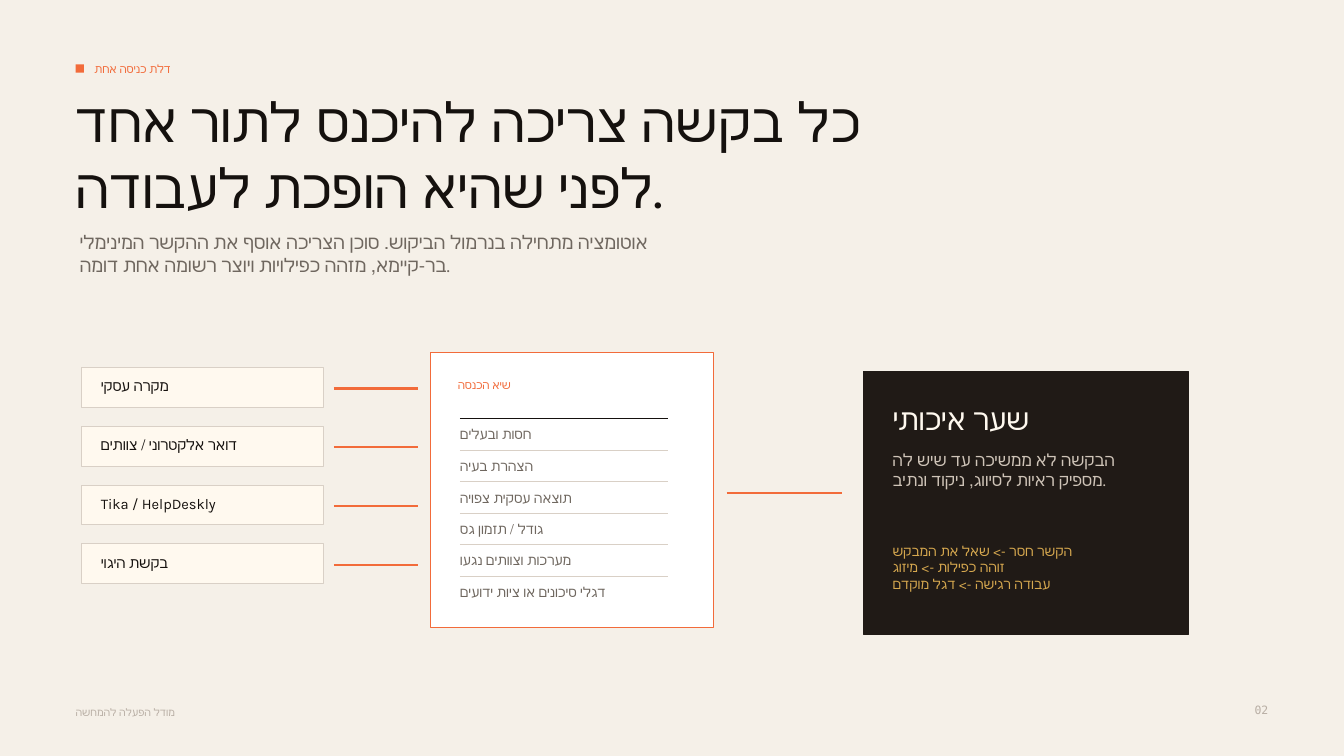
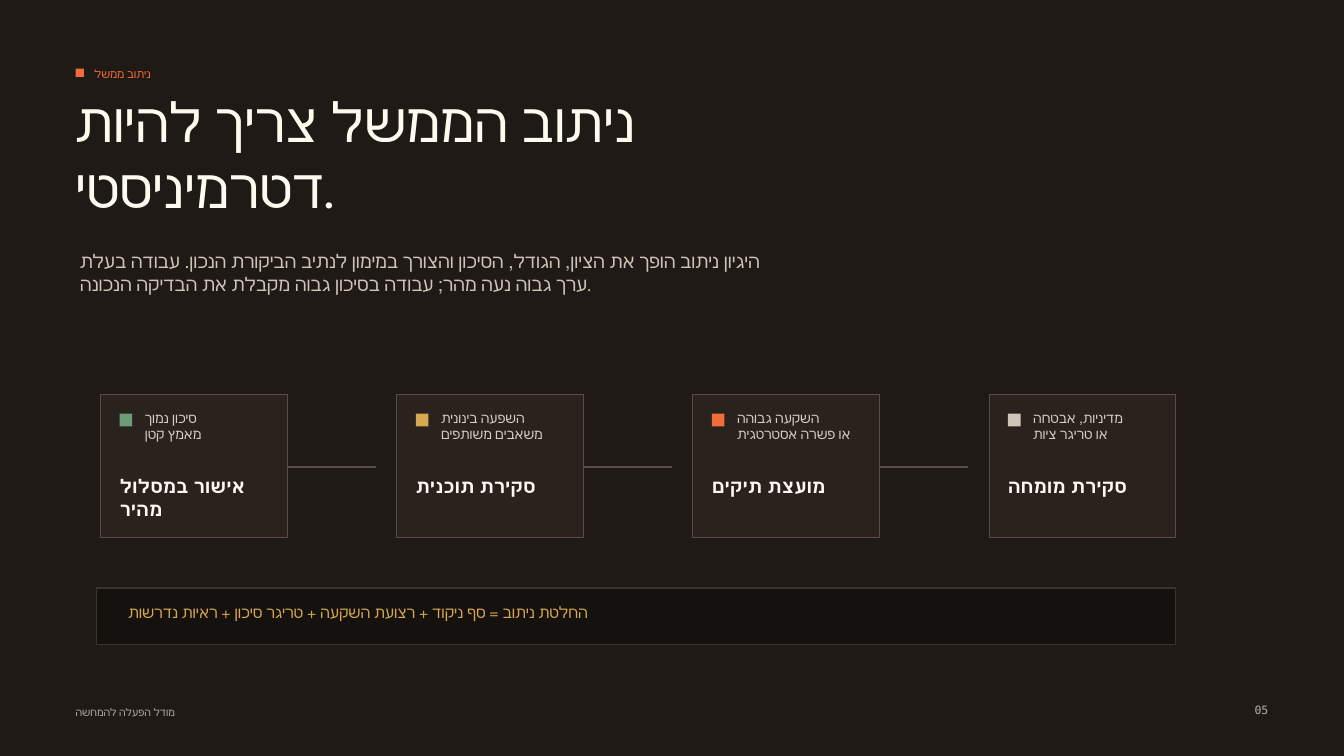
from lxml.etree import SubElement
from pptx import Presentation
from pptx.dml.color import RGBColor
from pptx.enum.shapes import MSO_CONNECTOR, MSO_SHAPE
from pptx.enum.text import MSO_ANCHOR, PP_ALIGN
from pptx.oxml.ns import qn
from pptx.util import Pt

SANS = "Karla"
MONO = "DejaVu Sans Mono"
INK = "15110E"
DARK = "201A16"
PAPER = "F5F0E8"
CREAM = "FFF9EF"
WHITE = "FFFFFF"
ORANGE = "F26B3A"
GOLD = "D6A84F"
GREEN = "6E9B78"
SAND = "CFC4B8"
PALE = "D9CFC4"
RULE = "D9D0C6"
GREY = "6F675F"
MUTED = "B8AEA4"
BROWN = "5B4D44"
PANEL = "2A221D"
EDGE = "3C332D"
FOOTER = "מודל הפעלה להמחשה"


def color(value):
    """Turn a hex string into a colour."""
    return RGBColor.from_string(value)


def add_box(page, left, top, width, height, fill, line=None):
    """Add a flat rectangle with an optional thin outline."""
    box = page.shapes.add_shape(MSO_SHAPE.RECTANGLE, Pt(left), Pt(top), Pt(width), Pt(height))
    box.shadow.inherit = False
    box.fill.solid()
    box.fill.fore_color.rgb = color(fill)
    if line:
        box.line.color.rgb = color(line)
        box.line.width = Pt(0.75)
    else:
        box.line.fill.background()


def add_line(page, left, top, width, stroke, weight=1.5):
    """Add a horizontal line without a shadow."""
    line = page.shapes.add_connector(
        MSO_CONNECTOR.STRAIGHT, Pt(left), Pt(top), Pt(left + width), Pt(top))
    line.line.color.rgb = color(stroke)
    line.line.width = Pt(weight)
    SubElement(line._element.spPr, qn("a:effectLst"))


def add_text(page, left, top, width, height, text, size, ink, font=SANS,
             bold=None, align=None, anchor=MSO_ANCHOR.TOP):
    """Add a wrapped text box without margins, one paragraph per line of text."""
    box = page.shapes.add_textbox(Pt(left), Pt(top), Pt(width), Pt(height))
    frame = box.text_frame
    frame.text = text
    frame.word_wrap = True
    frame.vertical_anchor = anchor
    frame.margin_left = frame.margin_right = frame.margin_top = frame.margin_bottom = 0
    for para in frame.paragraphs:
        para.alignment = align
        for span in para.runs:
            span.font.name = font
            span.font.size = Pt(size)
            span.font.color.rgb = color(ink)
            span.font.bold = bold


def add_page(deck, background, title_ink, number, eyebrow, eyebrow_top, title, title_width):
    """Add a page with its background, eyebrow, title and footer."""
    page = deck.slides.add_slide(deck.slide_layouts[6])
    page.background.fill.solid()
    page.background.fill.fore_color.rgb = color(background)
    add_box(page, 54, eyebrow_top + 5.5, 6, 6, ORANGE)
    add_text(page, 67.5, eyebrow_top, 315, 18, eyebrow, 8.2, ORANGE, MONO,
             anchor=MSO_ANCHOR.MIDDLE)
    add_text(page, 54, 63, title_width, 99, title, 39, title_ink)
    add_text(page, 54, 504, 240, 13.5, FOOTER, 7.5, MUTED, MONO)
    add_text(page, 870, 502.5, 36, 15, number, 8.2, MUTED, MONO, align=PP_ALIGN.RIGHT)
    return page


def add_source(page, left, top, label):
    """Add a request source and the line leading out of it."""
    add_box(page, left, top, 172.5, 28.5, CREAM, RULE)
    add_text(page, left + 13.5, top + 6.75, 142.5, 13.5, label, 10.5, INK)
    add_line(page, left + 180, top + 15, 60, ORANGE)


def add_record(page, left, top, heading, fields):
    """Add the intake record with a rule above each field."""
    add_box(page, left, top, 202.5, 196.5, WHITE, ORANGE)
    add_text(page, left + 19.5, top + 18, 142.5, 13.5, heading, 8.2, ORANGE, MONO)
    for index, field in enumerate(fields):
        rule_top = top + 47 + index * 22.5
        add_line(page, left + 21, rule_top, 148.5, RULE if index else INK, 0.75)
        add_text(page, left + 21, rule_top + 5.5, 154, 13.5, field, 9.8, GREY)


def add_gate(page, left, top, heading, body, rules):
    """Add the dark quality gate panel."""
    add_box(page, left, top, 232.5, 187.5, DARK, DARK)
    add_text(page, left + 21, top + 21, 165, 28.5, heading, 21, CREAM)
    add_text(page, left + 21, top + 55.5, 172.5, 63, body, 12, SAND)
    add_text(page, left + 21, top + 122, 172.5, 52.5, rules, 9.8, GOLD, MONO)


def add_route(page, left, top, marker, condition, decision):
    """Add one governance route card."""
    add_box(page, left, top, 133.5, 102, PANEL, BROWN)
    add_box(page, left + 13.5, top + 13.5, 9, 9, marker)
    add_text(page, left + 31.5, top + 10.5, 84, 36, condition, 9.8, PALE)
    add_text(page, left + 13.5, top + 57, 105, 31.5, decision, 13.5, CREAM, bold=True)


def add_formula(page, left, top, formula):
    """Add the bar that states the routing rule."""
    add_box(page, left, top, 771, 40.5, INK, EDGE)
    add_text(page, left + 22.5, top + 10.5, 540, 19.5, formula, 11.2, GOLD, MONO)


def build_intake(deck):
    """Build the single intake page."""
    page = add_page(deck, PAPER, INK, "02", "דלת כניסה אחת", 40.5,
                    "כל בקשה צריכה להיכנס לתור אחד לפני שהיא הופכת לעבודה.", 615)
    add_text(page, 57, 165, 457.5, 54,
             "אוטומציה מתחילה בנרמול הביקוש. סוכן הצריכה אוסף את ההקשר המינימלי "
             "בר-קיימא, מזהה כפילויות ויוצר רשומה אחת דומה.", 13.5, GREY)
    sources = ["מקרה עסקי", "דואר אלקטרוני / צוותים", "Tika / HelpDeskly", "בקשת היגוי"]
    for index, label in enumerate(sources):
        add_source(page, 58.5, 262.5 + index * 42, label)
    add_record(page, 307.5, 252, "שיא הכנסה", [
        "חסות ובעלים", "הצהרת בעיה", "תוצאה עסקית צפויה",
        "גודל / תזמון גס", "מערכות וצוותים נגעו", "דגלי סיכונים או ציות ידועים"])
    add_line(page, 519, 352, 82.5, ORANGE)
    add_gate(page, 616.5, 265.5, "שער איכותי",
             "הבקשה לא ממשיכה עד שיש לה מספיק ראיות לסיווג, ניקוד ונתיב.",
             "הקשר חסר -> שאל את המבקש\nזוהה כפילות -> מיזוג\nעבודה רגישה -> דגל מוקדם")


def build_routing(deck):
    """Build the governance routing page."""
    page = add_page(deck, DARK, CREAM, "05", "ניתוב ממשל", 43.5,
                    "ניתוב הממשל צריך להיות דטרמיניסטי.", 592.5)
    add_text(page, 57, 178.5, 495, 57,
             "היגיון ניתוב הופך את הציון, הגודל, הסיכון והצורך במימון לנתיב הביקורת הנכון. "
             "עבודה בעלת ערך גבוה נעה מהר; עבודה בסיכון גבוה מקבלת את הבדיקה הנכונה.",
             13.5, SAND)
    routes = [
        (GREEN, "סיכון נמוך\nמאמץ קטן", "אישור במסלול מהיר"),
        (GOLD, "השפעה בינונית\nמשאבים משותפים", "סקירת תוכנית"),
        (ORANGE, "השקעה גבוהה\nאו פשרה אסטרטגית", "מועצת תיקים"),
        (SAND, "מדיניות, אבטחה\nאו טריגר ציות", "סקירת מומחה"),
    ]
    for index, route in enumerate(routes):
        left = 72 + index * 211.5
        if index < len(routes) - 1:
            add_line(page, left + 133.5, 333.5, 63, BROWN)
        add_route(page, left, 282, *route)
    add_formula(page, 69, 420,
                "החלטת ניתוב = סף ניקוד + רצועת השקעה + טריגר סיכון + ראיות נדרשות")


def main():
    """Build and save the deck."""
    deck = Presentation()
    deck.slide_width = Pt(960)
    deck.slide_height = Pt(540)
    build_intake(deck)
    build_routing(deck)
    deck.save("out.pptx")


if __name__ == "__main__":
    main()
